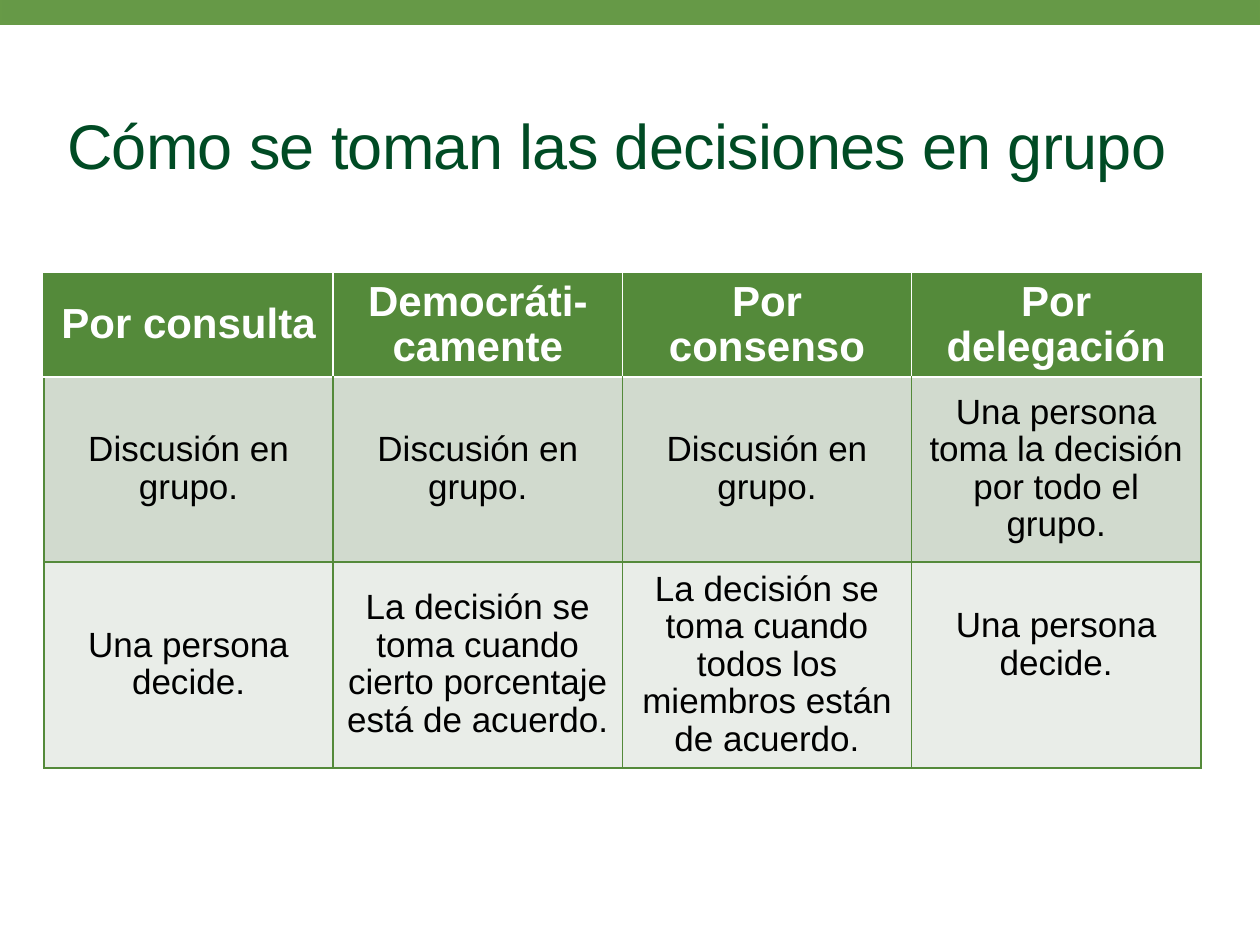
from lxml.etree import SubElement
from pptx import Presentation
from pptx.dml.color import RGBColor
from pptx.enum.shapes import MSO_SHAPE as Shape
from pptx.enum.text import MSO_ANCHOR as Anchor, PP_ALIGN as Align
from pptx.oxml.ns import qn
from pptx.util import Emu, Pt

EMU_PER_PX = 914400 / 126
FONT = "Arial"
COLORS = {
    "bar": "669947",
    "bar_line": "679A47",
    "title": "004B24",
    "green": "548A3A",
    "white": "FFFFFF",
    "black": "000000",
    "band_dark": "D1DACE",
    "band_light": "E9EDE8",
}
ROWS = [
    ["Por consulta", "Democráti- camente", "Por consenso", "Por delegación"],
    ["Discusión en grupo."] * 3 + ["Una persona toma la decisión por todo el grupo."],
    [
        "Una persona decide.",
        "La decisión se toma cuando cierto porcentaje está de acuerdo.",
        "La decisión se toma cuando todos los miembros están de acuerdo.",
        "Una persona decide.",
    ],
]
ROW_HEIGHTS = [103, 185, 206]
ROW_FILLS = ["green", "band_dark", "band_light"]
LINE_PX = 39


def px(length):
    return Emu(round(length * EMU_PER_PX))


def color(name):
    return RGBColor.from_string(COLORS[name])


def format_text(paragraph, size, color_name, bold=False):
    for run in paragraph.runs:
        run.font.name = FONT
        run.font.size = Pt(size)
        run.font.bold = bold
        run.font.color.rgb = color(color_name)


def add_bar(slide, left, top, width, height):
    bar = slide.shapes.add_shape(Shape.RECTANGLE, px(left), px(top), px(width), px(height))
    bar.shadow.inherit = False
    bar.fill.solid()
    bar.fill.fore_color.rgb = color("bar")
    bar.line.color.rgb = color("bar_line")
    bar.line.width = Pt(2)


def set_title(slide, text, left, top, width, height):
    title = slide.shapes.title
    title.left, title.top, title.width, title.height = map(px, (left, top, width, height))
    frame = title.text_frame
    frame.margin_left = frame.margin_right = frame.margin_top = frame.margin_bottom = 0
    frame.vertical_anchor = Anchor.MIDDLE
    frame.word_wrap = True
    frame.text = text
    paragraph = frame.paragraphs[0]
    paragraph.alignment = Align.LEFT
    format_text(paragraph, 36, "title")
    paragraph.runs[0].font._element.set("spc", "-40")


def set_borders(cell, left, right, top, bottom):
    properties = cell._tc.get_or_add_tcPr()
    for side, name in zip("LRTB", (left, right, top, bottom)):
        line = SubElement(properties, qn(f"a:ln{side}"), w=str(Pt(1)))
        fill = SubElement(line, qn("a:solidFill"))
        SubElement(fill, qn("a:srgbClr"), val=COLORS[name])


def fill_cell(cell, text, row, column, last_column):
    header = row == 0
    inner = "white" if header else "green"
    set_borders(
        cell,
        left="green" if column == 0 else inner,
        right="green" if column == last_column else inner,
        top="white" if row == 1 else "green",
        bottom=inner,
    )
    cell.fill.solid()
    cell.fill.fore_color.rgb = color(ROW_FILLS[row])
    cell.margin_left = cell.margin_right = px(9)
    cell.margin_top = cell.margin_bottom = px(5)
    cell.vertical_anchor = Anchor.MIDDLE
    cell.text_frame.text = text
    paragraph = cell.text_frame.paragraphs[0]
    paragraph.alignment = Align.CENTER
    paragraph.line_spacing = 0.96
    format_text(paragraph, 24 if header else 20, "white" if header else "black", header)


def add_decision_table(slide, left, top, width):
    column_count = len(ROWS[0])
    frame = slide.shapes.add_table(
        len(ROWS), column_count, px(left), px(top), px(width), px(sum(ROW_HEIGHTS))
    )
    table = frame.table
    table.horz_banding = False
    for column in table.columns:
        column.width = px(width / column_count)
    for row, (texts, height) in enumerate(zip(ROWS, ROW_HEIGHTS)):
        table.rows[row].height = px(height)
        for column, text in enumerate(texts):
            fill_cell(table.cell(row, column), text, row, column, column_count - 1)
    table.cell(len(ROWS) - 1, column_count - 1).margin_bottom = px(5 + LINE_PX)


def main():
    presentation = Presentation()
    presentation.slide_width, presentation.slide_height = px(1260), px(945)
    slide = presentation.slides.add_slide(presentation.slide_layouts[5])
    add_bar(slide, 0, -2, 1261, 25)
    set_title(slide, "Cómo se toman las decisiones en grupo", 67, 71, 1134, 146)
    add_decision_table(slide, 44, 274, 1157)
    presentation.save("out.pptx")


if __name__ == "__main__":
    main()
